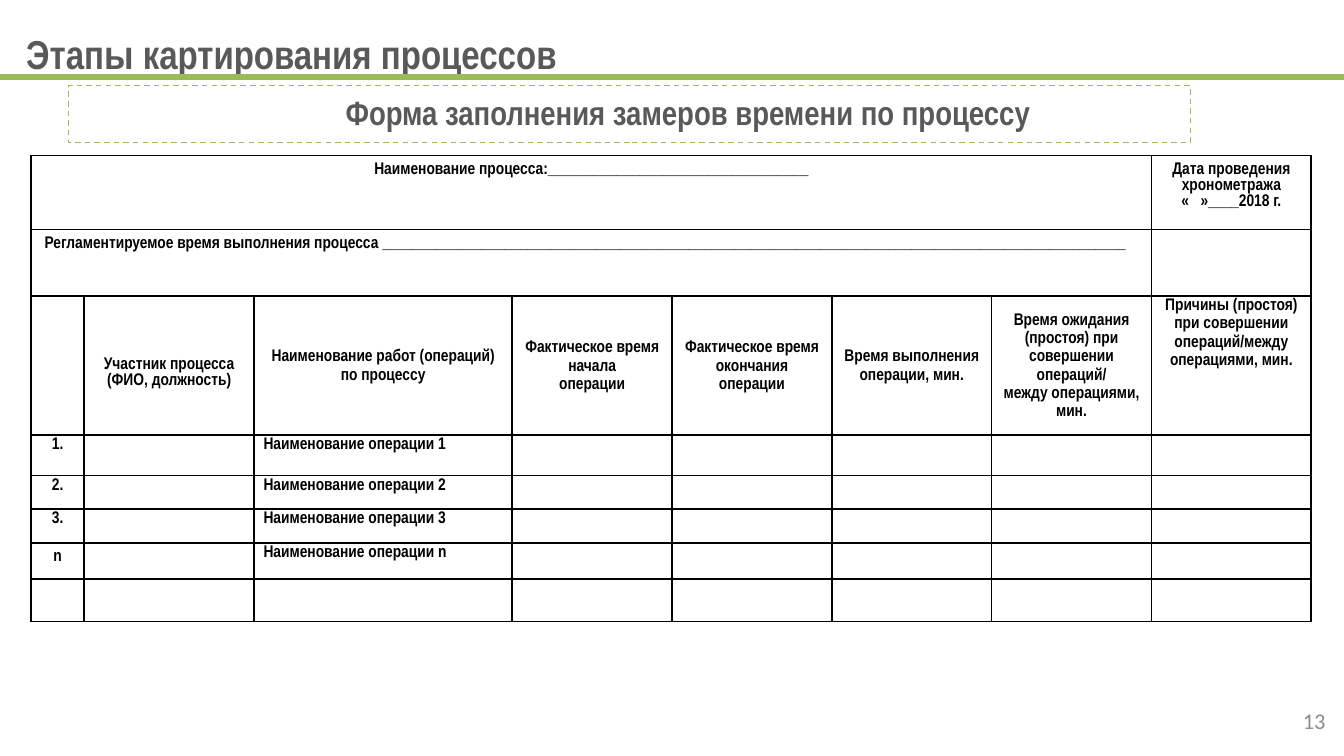
import pptx
import pptx.util
import pptx.dml.color
import pptx.enum.dml
import pptx.enum.shapes
import pptx.enum.text
import pptx.oxml
import pptx.oxml.ns
from pptx.util import Cm

ALIGN = pptx.enum.text.PP_ALIGN
ANCHOR = pptx.enum.text.MSO_ANCHOR
GREEN, GREY, BLACK = "9BBB59", "595959", "000000"


def color(value):
    return pptx.dml.color.RGBColor.from_string(value)


def style(para, size, value, align, bold=True, name="Arial Narrow"):
    para.alignment = align
    para.font.name = name
    para.font.size = pptx.util.Pt(size)
    para.font.bold = bold
    para.font.color.rgb = color(value)


deck = pptx.Presentation()
deck.slide_width, deck.slide_height = Cm(25.4), Cm(14.29)
page = deck.slides.add_slide(deck.slide_layouts[5])

# Title
title = page.shapes.title
title.left, title.top, title.width, title.height = Cm(0.24), Cm(0.43), Cm(22.86), Cm(1.17)
title.text_frame.text = "Этапы картирования процессов"
title.text_frame.auto_size = pptx.enum.text.MSO_AUTO_SIZE.NONE
title.text_frame.vertical_anchor = ANCHOR.MIDDLE
style(title.text_frame.paragraphs[0], 21.6, GREY, ALIGN.LEFT)

# Rule under the title
rule = page.shapes.add_connector(
    pptx.enum.shapes.MSO_CONNECTOR.STRAIGHT, 0, Cm(1.45), deck.slide_width, Cm(1.45))
rule.line.color.rgb = color(GREEN)
rule.line.width = pptx.util.Pt(3)
rule._element.spPr.append(pptx.oxml.parse_xml(
    f"<a:effectLst {pptx.oxml.ns.nsdecls('a')}/>"))

# Dashed frame of the heading
frame = page.shapes.add_shape(
    pptx.enum.shapes.MSO_SHAPE.RECTANGLE, Cm(1.3), Cm(1.62), Cm(21.2), Cm(1.08))
frame.shadow.inherit = False
frame.fill.background()
frame.line.color.rgb = color(GREEN)
frame.line.width = pptx.util.Pt(0.75)
frame.line.dash_style = pptx.enum.dml.MSO_LINE.DASH

# Heading and page number
for text, place, size, value, align, bold, name, anchor in [
    ("Форма заполнения замеров времени по процессу", (3.71, 1.62, 18.59, 1.02),
     18, GREY, ALIGN.CENTER, True, "Arial Narrow", ANCHOR.TOP),
    ("13", (19.38, 13.24, 5.92, 0.76),
     12, "8C8C8C", ALIGN.RIGHT, False, "Calibri", ANCHOR.MIDDLE),
]:
    box = page.shapes.add_textbox(*[Cm(length) for length in place])
    box.text_frame.word_wrap = True
    box.text_frame.vertical_anchor = anchor
    box.text_frame.text = text
    style(box.text_frame.paragraphs[0], size, value, align, bold, name)

# Timing form: grid
widths = [1, 3.21, 4.88] + [3.02] * 5
heights = [1.25, 1.25, 2.08, 0.76, 0.6, 0.57, 0.68, 0.81]
form = page.shapes.add_table(
    len(heights), len(widths), Cm(0.59), Cm(2.94), Cm(sum(widths)), Cm(sum(heights)))
table = form.table
table.first_row = table.horz_banding = False
for column, width in zip(table.columns, widths):
    column.width = Cm(width)
for row, height in zip(table.rows, heights):
    row.height = Cm(height)
for index in (0, 1):
    table.cell(index, 0).merge(table.cell(index, 6))

# Timing form: wording by row and column
wording = {
    (0, 0): "Наименование процесса:" + "_" * 34,
    (0, 7): "Дата проведения хронометража\n«   »____2018 г.",
    (1, 0): "Регламентируемое время выполнения процесса " + "_" * 97,
}
headers = [
    "Участник процесса\n(ФИО, должность)",
    "Наименование работ (операций) по процессу",
    "Фактическое время начала\nоперации",
    "Фактическое время окончания операции",
    "Время выполнения операции, мин.",
    "Время ожидания (простоя) при совершении операций/\nмежду операциями, мин.",
    "Причины (простоя) при совершении операций/между операциями, мин.",
]
for index, header in enumerate(headers, 1):
    wording[2, index] = header
for index, mark in enumerate(["1.", "2.", "3.", "n"], 3):
    wording[index, 0] = mark
    wording[index, 2] = "Наименование операции " + mark.rstrip(".")

# Timing form: cells
plain = {(0, 0), (0, 7), (1, 0), (2, 1), (6, 0)}
for r in range(len(heights)):
    for c in range(len(widths)):
        cell = table.cell(r, c)
        cell.fill.background()
        for position, side in enumerate(["lnL", "lnR", "lnT", "lnB"]):
            cell._tc.get_or_add_tcPr().insert(position, pptx.oxml.parse_xml(
                f'<a:{side} {pptx.oxml.ns.nsdecls("a")} w="12700"><a:solidFill>'
                f'<a:srgbClr val="{BLACK}"/></a:solidFill></a:{side}>'))
        spaced = (r, c) in wording and (r, c) not in plain
        if spaced:
            cell.margin_left = cell.margin_right = Cm(0.18)
            cell.margin_top = cell.margin_bottom = 0
        if r == 2 and 1 <= c <= 6:
            cell.vertical_anchor = ANCHOR.MIDDLE
        cell.text_frame.text = wording.get((r, c), "")
        left = (r, c) == (1, 0) or (r > 2 and c == 2)
        for para in cell.text_frame.paragraphs:
            style(para, 9, BLACK, ALIGN.LEFT if left else ALIGN.CENTER)
            if spaced:
                para.line_spacing = 1.15
            # The paragraph mark must be small too, or it stretches the row
            para._p.append(pptx.oxml.parse_xml(
                f'<a:endParaRPr {pptx.oxml.ns.nsdecls("a")} sz="900" b="1">'
                '<a:latin typeface="Arial Narrow"/></a:endParaRPr>'))
table.cell(2, 1).margin_top = Cm(0.43)

deck.save("out.pptx")
